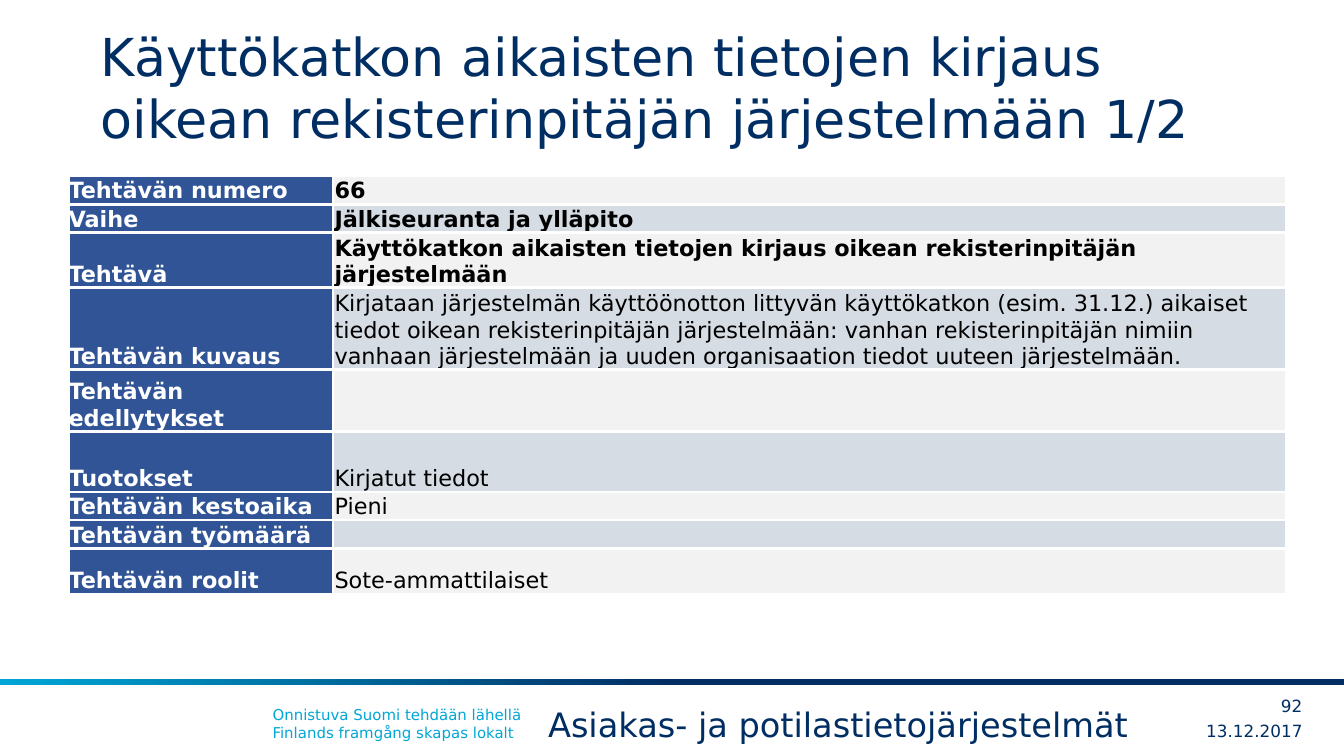
from pptx import Presentation
from pptx.dml.color import RGBColor
from pptx.enum.shapes import MSO_SHAPE as Shape
from pptx.enum.text import MSO_ANCHOR as Anchor, PP_ALIGN as Align
from pptx.oxml.ns import qn
from pptx.util import Inches, Pt
from lxml.etree import SubElement

FONT = "DejaVu Sans"
NAVY, CYAN, BLUE = "002E63", "00A6D6", "305496"
WHITE, BLACK = "FFFFFF", "000000"
BANDS = ["F2F2F2", "D6DCE4"]

# Label, value, bold value, row height
TASK = [
    ("Tehtävän numero", "66", True, 0.2),
    ("Vaihe", "Jälkiseuranta ja ylläpito", True, 0.2),
    ("Tehtävä", "Käyttökatkon aikaisten tietojen kirjaus oikean "
     "rekisterinpitäjän järjestelmään", True, 0.4),
    ("Tehtävän kuvaus", "Kirjataan järjestelmän käyttöönotton littyvän "
     "käyttökatkon (esim. 31.12.) aikaiset tiedot oikean rekisterinpitäjän "
     "järjestelmään: vanhan rekisterinpitäjän nimiin vanhaan järjestelmään "
     "ja uuden organisaation tiedot uuteen järjestelmään.", False, 0.59),
    ("Tehtävän edellytykset", "", False, 0.46),
    ("Tuotokset", "Kirjatut tiedot", False, 0.45),
    ("Tehtävän kestoaika", "Pieni", False, 0.2),
    ("Tehtävän työmäärä", "", False, 0.2),
    ("Tehtävän roolit", "Sote-ammattilaiset", False, 0.34),
]


def color(hexa):
    return RGBColor.from_string(hexa)


def style(par, size, hexa, bold=False, align=Align.LEFT):
    par.alignment = align
    font = par.font
    font.name, font.size, font.bold = FONT, Pt(size), bold
    font.color.rgb = color(hexa)


def add_text(slide, box, text, size, hexa, inset=(0.1, 0.05),
             anchor=Anchor.TOP, align=Align.LEFT, wrap=True):
    frame = slide.shapes.add_textbox(*map(Inches, box)).text_frame
    frame.word_wrap = wrap
    frame.vertical_anchor = anchor
    frame.margin_left = frame.margin_right = Inches(inset[0])
    frame.margin_top = frame.margin_bottom = Inches(inset[1])
    # A vertical tab is a line break within the paragraph
    frame.text = text.replace("\n", "\v")
    style(frame.paragraphs[0], size, hexa, align=align)


def add_edges(cell):
    props = cell._tc.get_or_add_tcPr()
    for side in ("a:lnL", "a:lnR", "a:lnT", "a:lnB"):
        line = SubElement(props, qn(side), w=str(Pt(1.5)))
        fill = SubElement(line, qn("a:solidFill"))
        SubElement(fill, qn("a:srgbClr"), val=WHITE)


def fill_cell(cell, text, back, hexa, bold, inset):
    add_edges(cell)
    cell.fill.solid()
    cell.fill.fore_color.rgb = color(back)
    cell.vertical_anchor = Anchor.BOTTOM
    cell.margin_left = cell.margin_right = cell.margin_top = Inches(inset)
    cell.margin_bottom = 0
    cell.text = text
    par = cell.text_frame.paragraphs[0]
    style(par, 12, hexa, bold)
    if not text:  # keeps an empty row from growing
        SubElement(par._p, qn("a:endParaRPr"), sz="1200")


def add_task(slide, left, top, widths):
    high = sum(row[-1] for row in TASK)
    box = map(Inches, (left, top, sum(widths), high))
    table = slide.shapes.add_table(len(TASK), len(widths), *box).table
    table.first_row = table.horz_banding = False
    for col, width in zip(table.columns, widths):
        col.width = Inches(width)
    for i, (label, value, bold, height) in enumerate(TASK):
        table.rows[i].height = Inches(height)
        fill_cell(table.cell(i, 0), label, BLUE, WHITE, True, 0)
        fill_cell(table.cell(i, 1), value, BANDS[i % 2], BLACK, bold, 0.01)


def add_footer(slide, top, width):
    # Gradient rule
    rule = slide.shapes.add_shape(
        Shape.RECTANGLE, 0, Inches(top), Inches(width), Inches(0.05))
    rule.shadow.inherit = False
    rule.line.fill.background()
    rule.fill.gradient()
    rule.fill.gradient_angle = 180
    for stop, spot, hexa in zip(rule.fill.gradient_stops, (0.5, 1), (NAVY, CYAN)):
        stop.position = spot
        stop.color.rgb = color(hexa)
    # Slogan and subject
    add_text(slide, (1.93, top + 0.15, 6.54, 0.37),
             "Onnistuva Suomi tehdään lähellä\nFinlands framgång skapas lokalt",
             8, CYAN)
    add_text(slide, (3.98, top + 0.14, 4.63, 0.4),
             "Asiakas- ja potilastietojärjestelmät", 18, NAVY, wrap=False)
    # Page number and date, flush right
    for text, drop, wide in (("92", 0.09, 0.43), ("13.12.2017", 0.28, 0.99)):
        add_text(slide, (width - 0.31 - wide, top + drop, wide, 0.22), text, 9,
                 NAVY, (0, 0), Anchor.MIDDLE, Align.RIGHT)


def main():
    deck = Presentation()
    # Widescreen, 16 to 9
    deck.slide_width = Inches(10)
    deck.slide_height = Inches(10) * 9 // 16
    slide = deck.slides.add_slide(deck.slide_layouts[6])
    add_footer(slide, 5.05, 10)
    add_text(slide, (0.75, 0.22, 8.51, 0.94),
             "Käyttökatkon aikaisten tietojen kirjaus oikean "
             "rekisterinpitäjän järjestelmään 1/2",
             28, NAVY, (0, 0.05), Anchor.BOTTOM)
    add_task(slide, 0.51, 1.31, (1.97, 7.09))
    deck.save("out.pptx")


if __name__ == "__main__":
    main()
